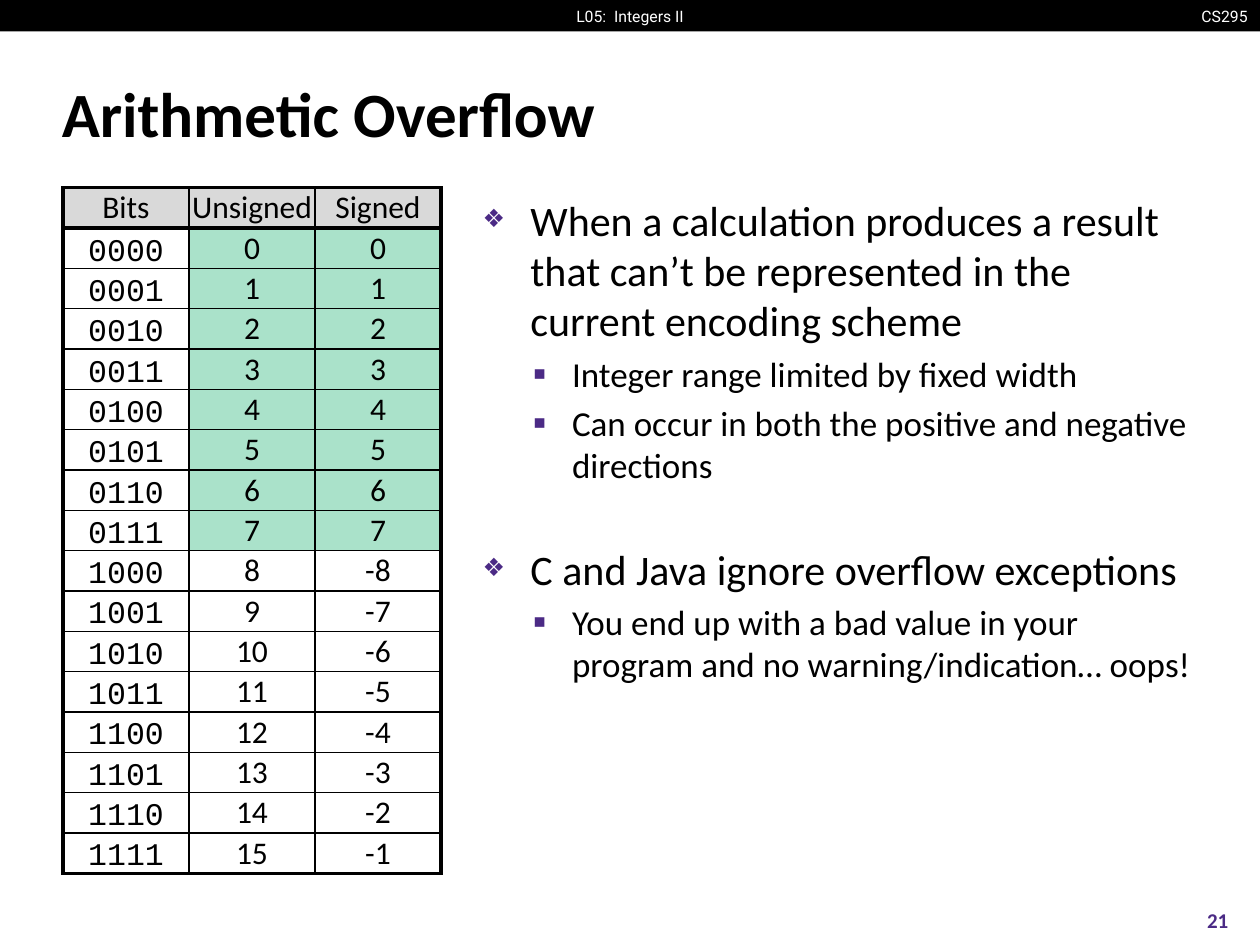
from lxml.etree import SubElement
from pptx import Presentation
from pptx.dml.color import RGBColor
from pptx.enum.shapes import MSO_SHAPE as Shape
from pptx.enum.text import MSO_ANCHOR as Anchor, MSO_AUTO_SIZE as AutoSize, PP_ALIGN as Align
from pptx.oxml.ns import qn
from pptx.util import Inches, Pt

BLACK = RGBColor(0x00, 0x00, 0x00)
WHITE = RGBColor(0xFF, 0xFF, 0xFF)
PURPLE = RGBColor(0x4B, 0x2A, 0x85)
GREY = RGBColor(0xD9, 0xD9, 0xD9)
GREEN = RGBColor(0xAA, 0xE2, 0xCA)

WIDTH, HEIGHT, BAR = 10, 7.5, 0.25
TABLE_LEFT, CONTENT_TOP = 0.5, 1.49
COLUMN, ROW = 1, 0.3
THIN, THICK = 1, 2.25
BITS = 4

# Per list level: bullet, bullet size in %, text indent, hanging indent, font size
LEVELS = [("❖", 60, 0.38, 0.38, 24), ("▪", 110, 0.71, 0.31, 20)]
POINTS = [
    (0, "When a calculation produces a result that can’t be represented "
        "in the current encoding scheme"),
    (1, "Integer range limited by fixed width"),
    (1, "Can occur in both the positive and negative directions"),
    (0, "C and Java ignore overflow exceptions"),
    (1, "You end up with a bad value in your program and no "
        "warning/indication… oops!"),
]
SECOND_TOPIC = 3


def place(shape, left, top, width, height):
    shape.left, shape.top = Inches(left), Inches(top)
    shape.width, shape.height = Inches(width), Inches(height)


def style(para, size, color=BLACK, name="Calibri", bold=False, align=Align.LEFT):
    para.alignment = align
    font = para.font
    font.name, font.size, font.bold = name, Pt(size), bold
    font.color.rgb = color


def add_label(page, text, area, wrap=False, **look):
    box = page.shapes.add_textbox(*map(Inches, area))
    frame = box.text_frame
    frame.word_wrap = wrap
    frame.vertical_anchor = Anchor.MIDDLE
    frame.text = text
    style(frame.paragraphs[0], **look)


def add_header(page):
    bar = page.shapes.add_shape(Shape.RECTANGLE, 0, 0, Inches(WIDTH), Inches(BAR))
    bar.shadow.inherit = False
    bar.fill.solid()
    bar.fill.fore_color.rgb = BLACK
    bar.line.fill.background()
    look = dict(size=9, color=WHITE, name="Roboto")
    add_label(page, "CS295", (9.41, 0, 0.59, BAR), align=Align.RIGHT, **look)
    add_label(page, "L05:  Integers II", (4.46, 0, 1.08, BAR), align=Align.CENTER, **look)


def add_bullet(para, char, percent):
    props = para._p.get_or_add_pPr()
    color = SubElement(props, qn("a:buClr"))
    SubElement(color, qn("a:srgbClr"), val=str(PURPLE))
    SubElement(props, qn("a:buSzPct"), val=str(percent * 1000))
    SubElement(props, qn("a:buChar"), char=char)


def fill_list(body):
    place(body, 3.73, CONTENT_TOP, 5.85, 5.44)
    frame = body.text_frame
    frame.auto_size = AutoSize.NONE
    frame.text = "\n".join(text for _, text in POINTS)
    for para, (level, _) in zip(frame.paragraphs, POINTS):
        char, percent, indent, hanging, size = LEVELS[level]
        para.level = level
        style(para, size)
        props = para._p.get_or_add_pPr()
        props.set("marL", str(Inches(indent)))
        props.set("indent", str(-Inches(hanging)))
        add_bullet(para, char, percent)
    # Wider gap between the two topics
    frame.paragraphs[SECOND_TOPIC].space_before = Pt(33)


def set_borders(cell, **widths):
    props = cell._tc.get_or_add_tcPr()
    for side in "LRTB":
        line = SubElement(props, qn(f"a:ln{side}"), w=str(Pt(widths[side])))
        fill = SubElement(line, qn("a:solidFill"))
        SubElement(fill, qn("a:srgbClr"), val=str(BLACK))


def fill_cell(cell, text, is_bits, color):
    cell.margin_left = cell.margin_right = 0
    cell.margin_top = Inches(0.1)
    cell.margin_bottom = 0 if is_bits else Inches(0.04)
    cell.vertical_anchor = Anchor.MIDDLE
    cell.text = text
    para = cell.text_frame.paragraphs[0]
    para.line_spacing = 0.6
    style(para, 18, name="Courier New" if is_bits else "Calibri", align=Align.CENTER)
    if color is None:
        cell.fill.background()
    else:
        cell.fill.solid()
        cell.fill.fore_color.rgb = color


def add_encodings(page):
    count = 2 ** BITS
    half = count // 2
    rows = [("Bits", "Unsigned", "Signed")]
    rows += [(f"{n:0{BITS}b}", str(n), str(n if n < half else n - count))
             for n in range(count)]
    last_row, last_col = len(rows) - 1, len(rows[0]) - 1
    table = page.shapes.add_table(
        len(rows), len(rows[0]), Inches(TABLE_LEFT), Inches(CONTENT_TOP),
        Inches(COLUMN * len(rows[0])), Inches(ROW * len(rows))).table
    table.first_row = table.horz_banding = False
    for r, row in enumerate(rows):
        for c, text in enumerate(row):
            cell = table.cell(r, c)
            set_borders(cell,
                        L=THICK if c == 0 else THIN,
                        R=THICK if c == last_col else THIN,
                        T=THICK if r <= 1 else THIN,
                        B=THICK if r in (0, last_row) else THIN)
            # Green marks the values that both encodings share
            shared = c > 0 and row[1] == row[2]
            color = GREY if r == 0 else GREEN if shared else None
            fill_cell(cell, text, r > 0 and c == 0, color)


def main():
    deck = Presentation()
    deck.slide_width, deck.slide_height = Inches(WIDTH), Inches(HEIGHT)
    page = deck.slides.add_slide(deck.slide_layouts[1])
    add_header(page)

    # Title and list
    title, body = page.placeholders
    place(title, 0.39, 0.48, 9.19, 0.83)
    title.text_frame.text = "Arithmetic Overflow"
    style(title.text_frame.paragraphs[0], 36, bold=True)
    fill_list(body)

    # Page number and table
    add_label(page, "21", (9.33, 7.1, 0.67, 0.4), wrap=True,
              size=12, color=PURPLE, bold=True, align=Align.CENTER)
    add_encodings(page)
    deck.save("out.pptx")


if __name__ == "__main__":
    main()
